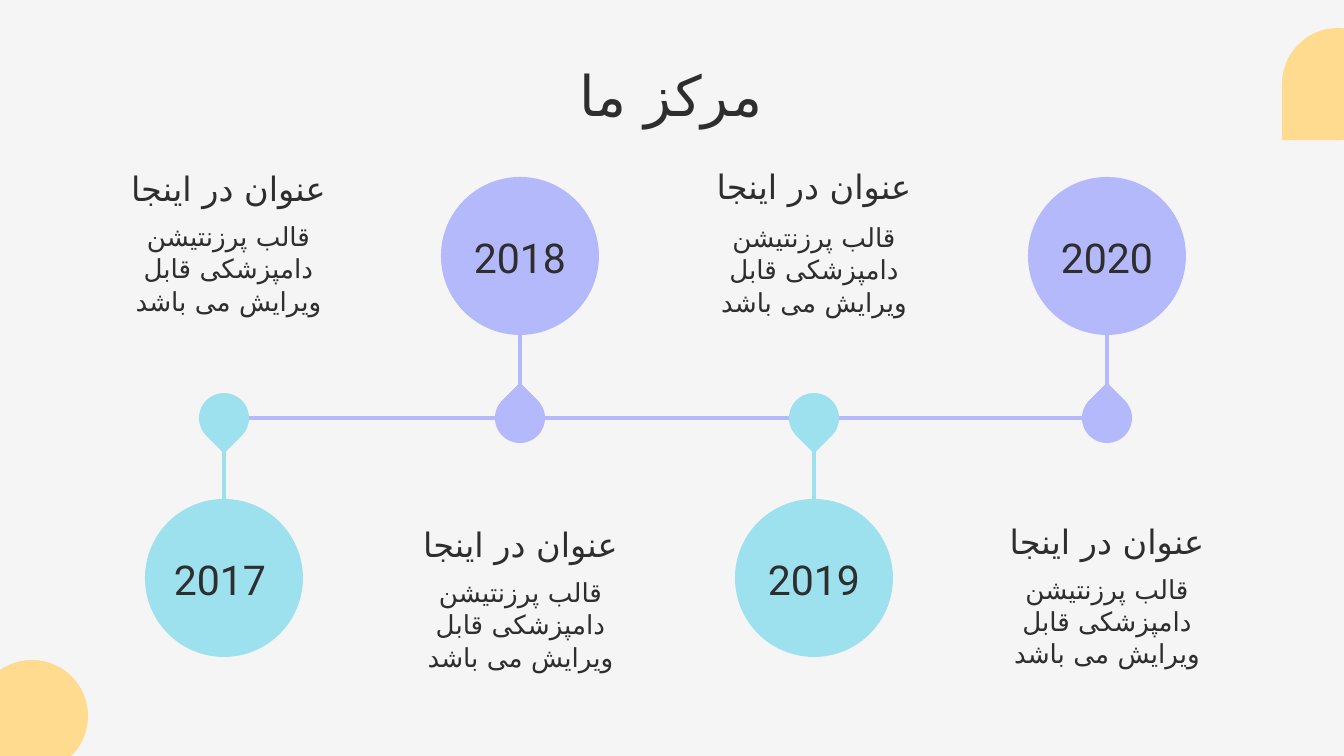
from lxml import etree
from pptx import Presentation
from pptx import util as u
from pptx.dml.color import RGBColor
from pptx.enum import shapes, text
from pptx.oxml.ns import qn

PX_PER_INCH = 134.4
COLORS = {"bg": "F5F5F5", "ink": "2E2E2E", "sun": "FFDB8F",
          "aqua": "9DE0EE", "lilac": "B3B9FB"}
PERSIAN_FONT = "DejaVu Sans"
HEADING = "عنوان در اینجا"
BODY = "قالب پرزنتیشن دامپزشکی قابل ویرایش می باشد"

AXIS_Y = 418
PIN, CIRCLE = 50, 158
UP_TOP, DOWN_TOP = 177, 499

# year, centre x, points up, year label centre x, caption box, body offset
MILESTONES = [
    ("2017", 224, False, 220, (106, 155, 245), 51),
    ("2018", 520, True, 520, (398, 511, 245), 51),
    ("2019", 814, False, 814, (683, 153, 262), 54),
    ("2020", 1107, True, 1107, (976, 508, 262), 51),
]


def px(n):
    return u.Emu(round(n * 914400 / PX_PER_INCH))


def rgb(name):
    return RGBColor.from_string(COLORS[name])


def add_text(slide, box, words, size, font="Roboto", sp=None, rtl=True,
             anchor=text.MSO_ANCHOR.MIDDLE, after=0, spacing=1.0):
    """Write centred text in a new text box, or in the given placeholder."""
    sp = sp or slide.shapes.add_textbox(0, 0, 0, 0)
    sp.left, sp.top, sp.width, sp.height = map(px, box)
    tf = sp.text_frame
    tf.word_wrap = True
    tf.auto_size = text.MSO_AUTO_SIZE.NONE
    tf.vertical_anchor = anchor
    tf.margin_left = tf.margin_right = u.Inches(0.1)
    tf.margin_top = tf.margin_bottom = u.Inches(0.1)
    p = tf.paragraphs[0]
    p.alignment = text.PP_ALIGN.CENTER
    p.space_after = u.Pt(after)
    p.line_spacing = spacing
    if rtl:
        p._p.get_or_add_pPr().set("rtl", "1")
    r = p.add_run()
    r.text = words
    r.font.size = u.Pt(size)
    r.font.name = font
    r.font.color.rgb = rgb("ink")
    etree.SubElement(r.font._element, qn("a:cs"), typeface=PERSIAN_FONT)


def add_shape(slide, kind, left, top, size, color, rotation=0):
    sp = slide.shapes.add_shape(kind, px(left), px(top), px(size), px(size))
    sp.shadow.inherit = False
    sp.fill.solid()
    sp.fill.fore_color.rgb = rgb(color)
    sp.line.fill.background()
    sp.rotation = rotation


def add_line(slide, x1, y1, x2, y2, color):
    line = slide.shapes.add_connector(
        shapes.MSO_CONNECTOR.STRAIGHT, px(x1), px(y1), px(x2), px(y2))
    line.line.color.rgb = rgb(color)
    line.line.width = u.Pt(2.25)
    etree.SubElement(line._element.spPr, qn("a:effectLst"))


def add_corners(slide):
    for left, top in ((-24, 660), (1282, 28)):
        add_shape(slide, shapes.MSO_SHAPE.TEAR, left, top, 112, "sun", 180)


def add_milestone(slide, year, x, up, label_x):
    """Draw a pin on the axis, joined to the year's circle above or below."""
    color = "lilac" if up else "aqua"
    top = UP_TOP if up else DOWN_TOP
    near_edge = top + CIRCLE if up else top
    tip = AXIS_Y - 30 if up else AXIS_Y + 30
    add_line(slide, x, near_edge, x, tip, color)
    add_shape(slide, shapes.MSO_SHAPE.TEAR, x - PIN / 2, AXIS_Y - PIN / 2,
              PIN, color, 315 if up else 135)
    add_shape(slide, shapes.MSO_SHAPE.OVAL, x - CIRCLE / 2, top, CIRCLE, color)
    add_text(slide, (label_x - 80, top + 43, 160, 74), year, 22, rtl=False)


def add_caption(slide, left, top, width, body_offset):
    add_text(slide, (left, top, width, 66), HEADING, 18)
    add_text(slide, (left, top + body_offset, width, 83), BODY, 14,
             font="Lato", anchor=text.MSO_ANCHOR.TOP, after=16, spacing=1.03)


def add_timeline(slide):
    first, last = MILESTONES[0][1], MILESTONES[-1][1]
    add_line(slide, first + PIN / 2, AXIS_Y, last, AXIS_Y, "lilac")
    for year, x, up, label_x, caption, body_offset in MILESTONES:
        add_milestone(slide, year, x, up, label_x)
        add_caption(slide, *caption, body_offset)


def main():
    prs = Presentation()
    prs.slide_width, prs.slide_height = px(1344), px(756)
    slide = prs.slides.add_slide(prs.slide_layouts[5])
    slide.background.fill.solid()
    slide.background.fill.fore_color.rgb = rgb("bg")
    add_corners(slide)
    add_text(slide, (200, 48, 942, 93), "مرکز ما", 30, sp=slide.shapes.title)
    add_timeline(slide)
    prs.save("out.pptx")


if __name__ == "__main__":
    main()
